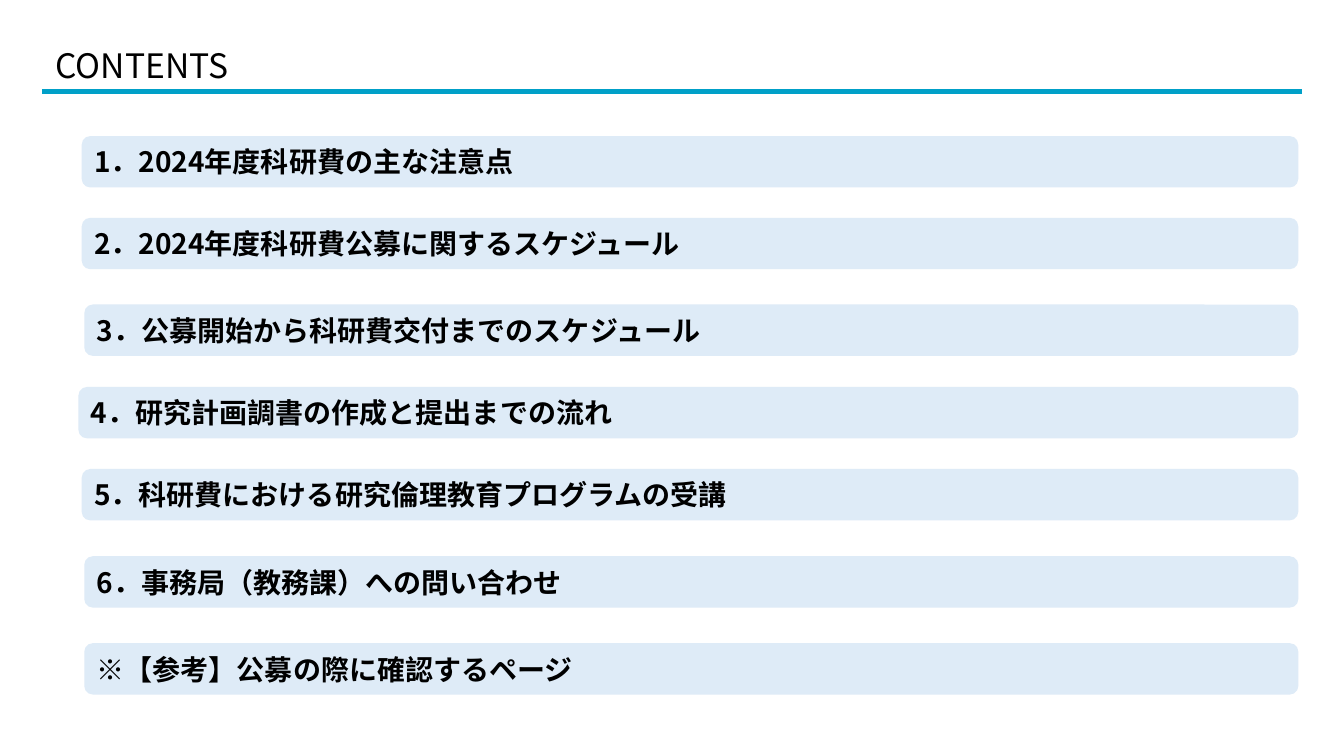
from typing import NamedTuple

from lxml.etree import SubElement
from pptx import Presentation
from pptx.dml.color import RGBColor
from pptx.enum.shapes import MSO_CONNECTOR as Connector, MSO_SHAPE as Shape
from pptx.enum.text import MSO_ANCHOR as Anchor, MSO_AUTO_SIZE as AutoSize, PP_ALIGN as Align
from pptx.oxml.ns import qn
from pptx.slide import Slide
from pptx.text.text import TextFrame
from pptx.util import Pt

FONT = "Noto Sans CJK JP"
BLACK = "000000"
ACCENT = "00A0C8"
PALE_BLUE = "DEEBF7"
BAR_RIGHT = 927.4
BAR_HEIGHT = 36.7


class Topic(NamedTuple):
    text: str
    left: float
    top: float


TOPICS = [
    Topic("1．2024年度科研費の主な注意点", 58.4, 97.2),
    Topic("2．2024年度科研費公募に関するスケジュール", 58.4, 155.6),
    Topic("3．公募開始から科研費交付までのスケジュール", 60.2, 217.5),
    Topic("4．研究計画調書の作成と提出までの流れ", 56, 276.4),
    Topic("5．科研費における研究倫理教育プログラムの受講", 58.4, 335),
    Topic("6．事務局（教務課）への問い合わせ", 60.2, 397.3),
    Topic("※【参考】公募の際に確認するページ", 60.2, 459.4),
]


def color(value: str) -> RGBColor:
    return RGBColor.from_string(value)


def set_text(frame: TextFrame, text: str, size: float, bold: bool = False) -> None:
    frame.text = text
    frame.word_wrap = True
    paragraph = frame.paragraphs[0]
    paragraph.alignment = Align.LEFT
    font = paragraph.runs[0].font
    font.name = FONT
    font.size = Pt(size)
    font.bold = bold
    font.color.rgb = color(BLACK)
    # Japanese characters take their font from a:ea
    SubElement(font._element, qn("a:ea"), typeface=FONT)


def add_heading(slide: Slide) -> None:
    rule = slide.shapes.add_connector(Connector.STRAIGHT, Pt(29.9), Pt(65.5), Pt(930), Pt(65.5))
    rule.line.color.rgb = color(ACCENT)
    rule.line.width = Pt(3.5)
    SubElement(rule._element.spPr, qn("a:effectLst"))

    title = slide.shapes.add_textbox(Pt(32.6), Pt(28.8), Pt(655), Pt(36))
    set_text(title.text_frame, "CONTENTS", 24)
    title.text_frame.auto_size = AutoSize.SHAPE_TO_FIT_TEXT


def add_topic(slide: Slide, topic: Topic) -> None:
    bar = slide.shapes.add_shape(
        Shape.ROUNDED_RECTANGLE,
        Pt(topic.left), Pt(topic.top), Pt(BAR_RIGHT - topic.left), Pt(BAR_HEIGHT),
    )
    bar.shadow.inherit = False
    bar.fill.solid()
    bar.fill.fore_color.rgb = color(PALE_BLUE)
    bar.line.fill.background()
    bar.text_frame.vertical_anchor = Anchor.MIDDLE
    set_text(bar.text_frame, topic.text, 20, bold=True)


def main() -> None:
    presentation = Presentation()
    presentation.slide_width = Pt(960)
    presentation.slide_height = Pt(540)
    slide = presentation.slides.add_slide(presentation.slide_layouts[6])
    add_heading(slide)
    for topic in TOPICS:
        add_topic(slide, topic)
    presentation.save("out.pptx")


if __name__ == "__main__":
    main()
